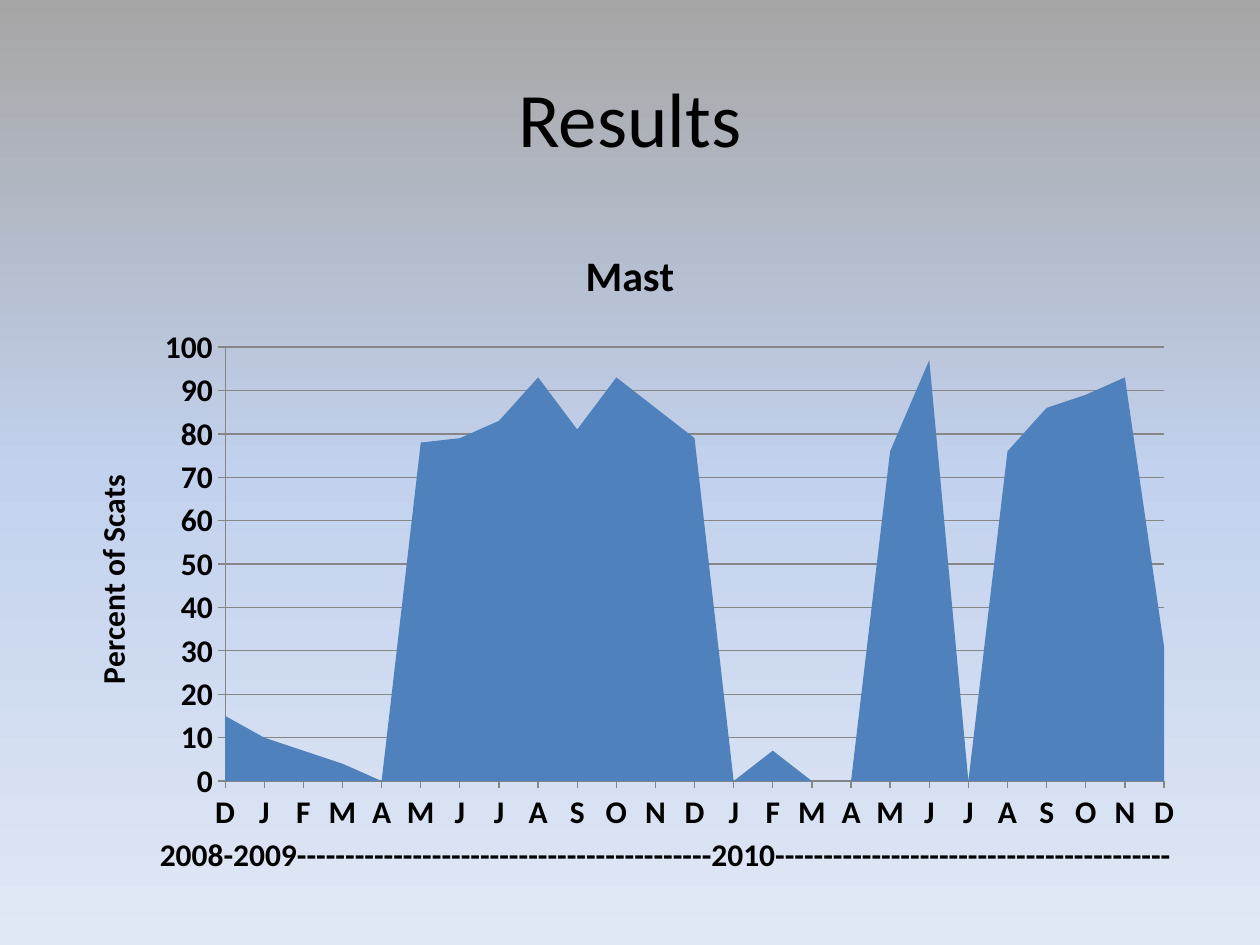
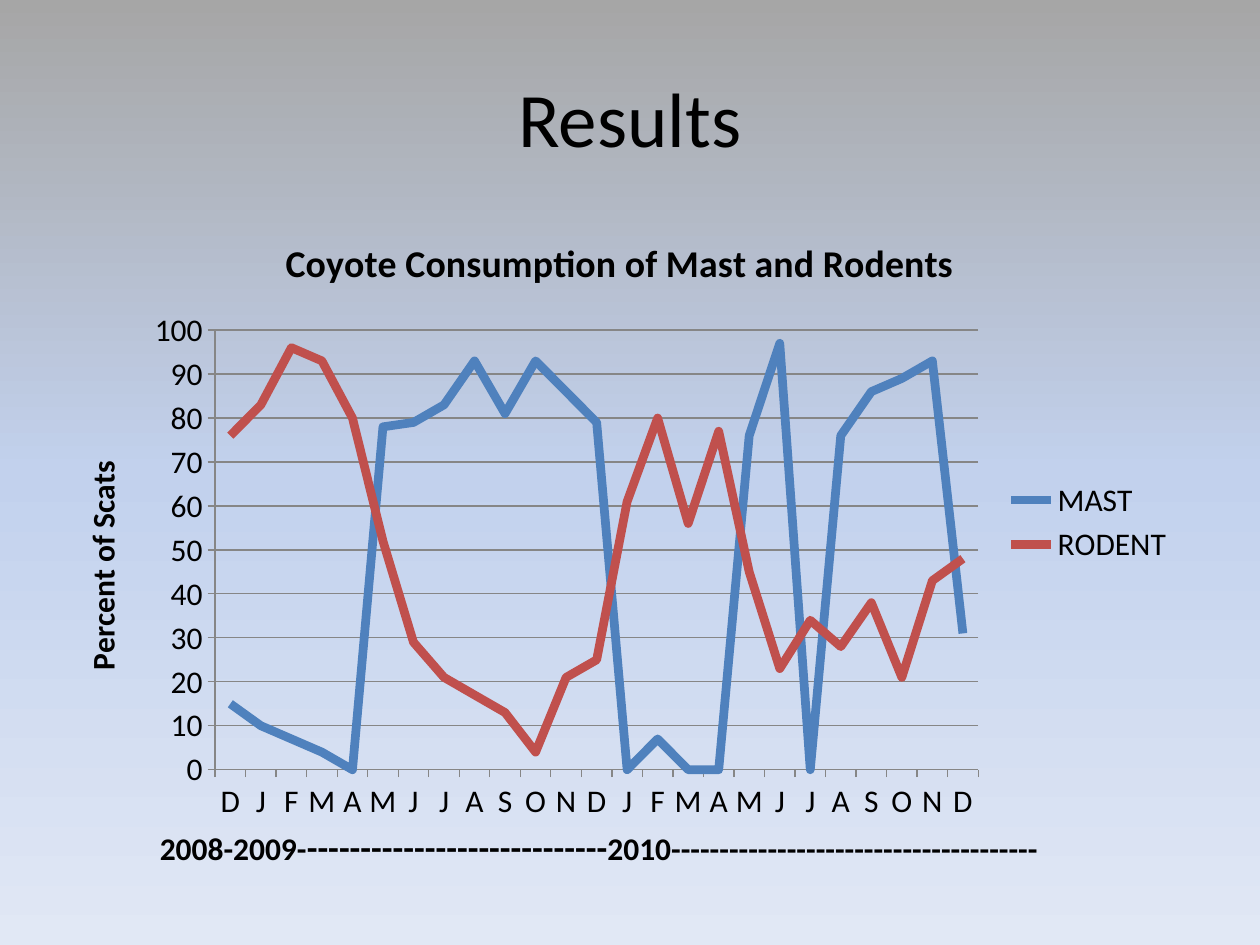
import copy
import pptx
import pptx.chart.data
import pptx.dml.color
import pptx.enum.chart
import pptx.enum.text
import pptx.oxml
import pptx.oxml.ns
import pptx.util

Inches, Pt = pptx.util.Inches, pptx.util.Pt
Kind = pptx.enum.chart.XL_CHART_TYPE
qn = pptx.oxml.ns.qn

# Content
FONT, INK, GRID = "Calibri", "000000", "868686"
BACK = [(0, "A6A6A6"), (0.5, "C2D1ED"), (1, "E1E8F5")]
MONTHS = list("DJFMAMJJASONDJFMAMJJASOND")
MAST = [15, 10, 7, 4, 0, 78, 79, 83, 93, 81, 93, 86, 79,
        0, 7, 0, 0, 76, 97, 0, 76, 86, 89, 93, 31]
RODENT = [76, 83, 96, 93, 80, 52, 29, 21, 17, 13, 4, 21, 25,
          61, 80, 56, 77, 45, 23, 34, 28, 38, 21, 43, 48]
HUES = ["4F81BD", "C0504D"]

# Each plot is given as left, top, width, height in parts of its chart
SLIDES = [
    dict(kind=Kind.AREA_STACKED, title="Mast", size=24, bold=True,
         series=[("Series 1", MAST)], at=(0.5, 1.75, 9, 4.95),
         plot=(0.143, 0.203, 0.828, 0.696), between="midCat",
         years=[("2008-2009" + "-" * 43 + "2010" + "-" * 41, 18)],
         note=(1.17, 6.58, 8.67, 0.4)),
    dict(kind=Kind.LINE, title="Coyote Consumption of Mast and Rodents",
         size=21.6, bold=False,
         series=[("MAST", MAST), ("RODENT", RODENT)],
         at=(0.42, 1.67, 9, 4.95),
         plot=(0.143, 0.192, 0.673, 0.705), between="between",
         years=[("2008-2009-", 18), ("-" * 28, 20), ("2010" + "-" * 38, 18)],
         note=(1.17, 6.5, 8.67, 0.44)),
]


def color(code):
    return pptx.dml.color.RGBColor.from_string(code)


def style(font, size, bold=False):
    font.name, font.size, font.bold = FONT, Pt(size), bold
    font.color.rgb = color(INK)


def add_text(slide, at, runs, bold=False, center=False):
    frame = slide.shapes.add_textbox(*map(Inches, at)).text_frame
    frame.word_wrap = True
    para = frame.paragraphs[0]
    style(para.font, runs[0][1], bold)
    for words, size in runs:
        run = para.add_run()
        run.text = words
        run.font.size = Pt(size)
    if center:
        frame.vertical_anchor = pptx.enum.text.MSO_ANCHOR.MIDDLE
        para.alignment = pptx.enum.text.PP_ALIGN.CENTER


def label(frame, words, size):
    frame.text = words
    style(frame.paragraphs[0].font, size, True)


def place(chart, box):
    """Fix the inner plot area and leave the chart's back clear."""
    space = chart._chartSpace
    area = space.find(".//" + qn("c:plotArea"))
    for old in area.findall(qn("c:layout")):
        area.remove(old)
    parts = "".join(f'<c:{tag} val="{val}"/>' for tag, val in zip("xywh", box))
    area.insert(0, pptx.oxml.parse_xml(
        f'<c:layout {pptx.oxml.ns.nsdecls("c")}><c:manualLayout>'
        '<c:layoutTarget val="inner"/><c:xMode val="edge"/>'
        f'<c:yMode val="edge"/>{parts}</c:manualLayout></c:layout>'))
    space.find(qn("c:chart")).addnext(pptx.oxml.parse_xml(
        f'<c:spPr {pptx.oxml.ns.nsdecls("c", "a")}><a:noFill/>'
        '<a:ln><a:noFill/></a:ln></c:spPr>'))


def cross(axis, mode):
    """Say whether the values start on the axis or half a step in."""
    root = axis._element
    for old in root.findall(qn("c:crossBetween")):
        root.remove(old)
    last = root.findall(qn("c:crossAx")) + root.findall(qn("c:crosses"))
    last[-1].addnext(pptx.oxml.parse_xml(
        f'<c:crossBetween {pptx.oxml.ns.nsdecls("c")} val="{mode}"/>'))


def add_chart(slide, page):
    data = pptx.chart.data.CategoryChartData()
    data.categories = MONTHS
    for name, vals in page["series"]:
        data.add_series(name, vals)
    chart = slide.shapes.add_chart(
        page["kind"], *map(Inches, page["at"]), data).chart
    style(chart.font, 18)
    place(chart, page["plot"])
    chart.has_title = True
    label(chart.chart_title.text_frame, page["title"], page["size"])
    chart.chart_title.include_in_layout = False

    # Axes
    cats, vals = chart.category_axis, chart.value_axis
    for axis in (cats, vals):
        style(axis.tick_labels.font, 18, page["bold"])
        axis.major_tick_mark = pptx.enum.chart.XL_TICK_MARK.OUTSIDE
        axis.minor_tick_mark = pptx.enum.chart.XL_TICK_MARK.NONE
        axis.format.line.color.rgb = color(GRID)
    cats.has_major_gridlines = False
    vals.minimum_scale, vals.maximum_scale, vals.major_unit = 0, 100, 10
    vals.has_major_gridlines = True
    vals.major_gridlines.format.line.color.rgb = color(GRID)
    cross(vals, page["between"])
    frame = vals.axis_title.text_frame
    label(frame, "Percent of Scats", 18)
    turn = frame._txBody.find(qn("a:bodyPr"))
    turn.set("rot", "-5400000")
    turn.set("vert", "horz")

    # Series and legend
    lines = page["kind"] == Kind.LINE
    chart.plots[0].vary_by_categories = False
    for part, hue in zip(chart.plots[0].series, HUES):
        if lines:
            part.smooth = False
            part.marker.style = pptx.enum.chart.XL_MARKER_STYLE.NONE
            part.format.line.width = Pt(5)
            part.format.line.color.rgb = color(hue)
        else:
            part.format.fill.solid()
            part.format.fill.fore_color.rgb = color(hue)
    chart.has_legend = lines
    if lines:
        chart.legend.position = pptx.enum.chart.XL_LEGEND_POSITION.RIGHT
        chart.legend.include_in_layout = False
        style(chart.legend.font, 18)


def paint(master):
    """Give every slide the same gradient, from top to bottom."""
    fill = master.background.fill
    fill.gradient()
    fill.gradient_angle = 270
    stops = master._element.find(".//" + qn("p:bg")).find(".//" + qn("a:gsLst"))
    stops.insert(1, copy.deepcopy(stops[0]))
    for stop, (pos, code) in zip(fill.gradient_stops, BACK):
        stop.position = pos
        stop.color.rgb = color(code)


def main():
    deck = pptx.Presentation()
    deck.slide_width, deck.slide_height = Inches(10), Inches(7.5)
    paint(deck.slide_master)
    for page in SLIDES:
        slide = deck.slides.add_slide(deck.slide_layouts[6])
        add_text(slide, (0.5, 0.3, 9, 1.25), [("Results", 44)], center=True)
        add_chart(slide, page)
        add_text(slide, page["note"], page["years"], bold=True)
    deck.save("out.pptx")


if __name__ == "__main__":
    main()
